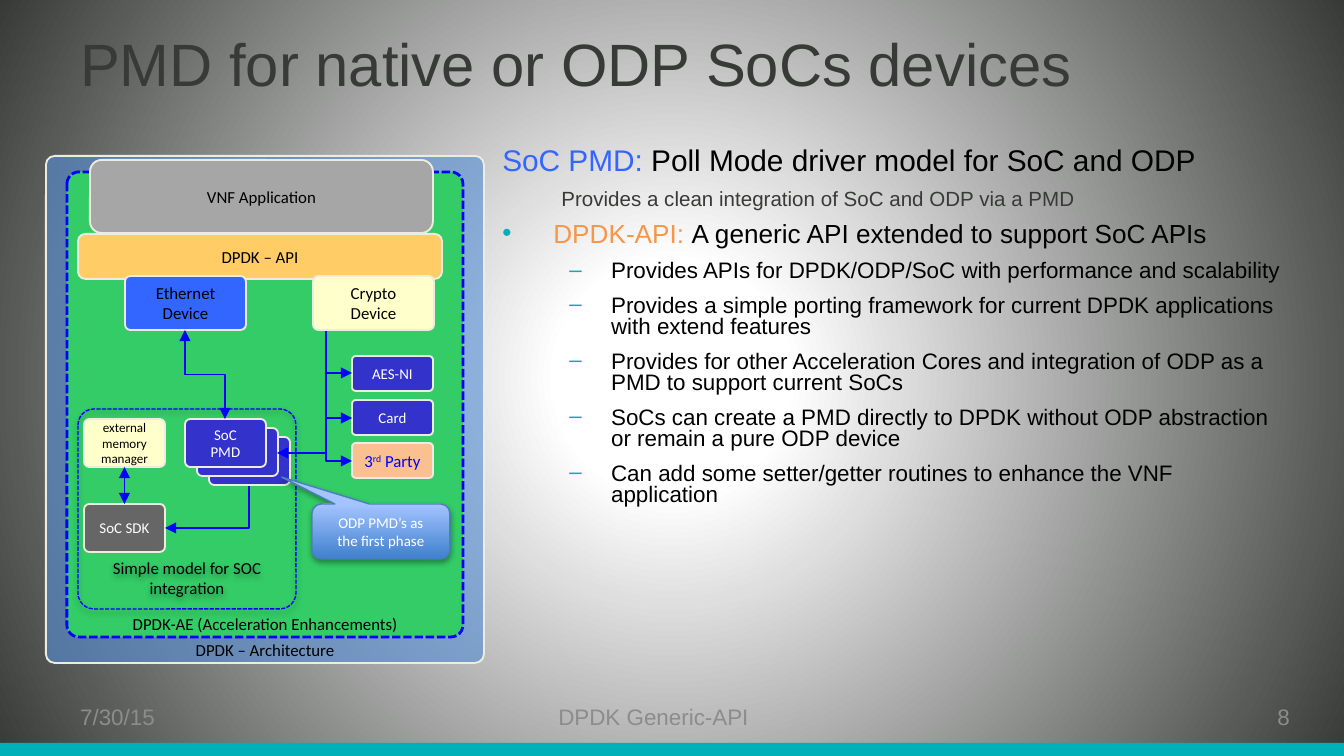
"""Build the slide on poll mode drivers for native or ODP SoC devices."""
from dataclasses import dataclass

import lxml.etree
import pptx
import pptx.dml.color
import pptx.enum.dml
import pptx.enum.shapes
import pptx.enum.text
import pptx.oxml
import pptx.oxml.ns
import pptx.util

PX = 914400 / 134.4
A_NS = "http://schemas.openxmlformats.org/drawingml/2006/main"
SHAPE = pptx.enum.shapes.MSO_SHAPE
ALIGN = pptx.enum.text.PP_ALIGN
ANCHOR = pptx.enum.text.MSO_ANCHOR
SYS_DASH = pptx.enum.dml.MSO_LINE.SQUARE_DOT
BLACK, WHITE, BLUE, CREAM = "000000", "FFFFFF", "0000FF", "FFFFCC"
INDIGO, EDGE, DARK, GREY, TEAL = "3333CC", "EEECE1", "373A36", "8C8C8C", "00B0B9"


@dataclass
class Box:
    x: int
    y: int
    w: int
    h: int
    text: str = ""
    fill: str | None = None
    adj: tuple = (0.11,)
    size: int = 9
    color: str = BLACK
    anchor: ANCHOR = ANCHOR.MIDDLE
    line: str = EDGE
    width: float = 1
    dashed: bool = False
    inset: int = 0
    kind: SHAPE = SHAPE.ROUNDED_RECTANGLE


@dataclass
class Elbow:
    x0: int
    y0: int
    x1: int
    y1: int
    preset: str = "bentConnector2"
    both: bool = False


@dataclass
class Label:
    x: int
    y: int
    w: int
    h: int
    text: str
    size: int
    color: str
    align: ALIGN = ALIGN.LEFT


@dataclass
class Item:
    runs: list
    size: int
    level: int = 0
    margin: float = 0
    indent: float = 0
    bullet: str = ""


def px(n: float) -> int:
    """Turn pixels into EMU."""
    return round(n * PX)


def rgb(value: str) -> pptx.dml.color.RGBColor:
    """Turn a hex string into a colour."""
    return pptx.dml.color.RGBColor.from_string(value)


def add_xml(parent, xml: str) -> None:
    """Append one drawing element given as text."""
    parent.append(pptx.oxml.parse_xml(xml.replace(" ", f' xmlns:a="{A_NS}" ', 1)))


def style(font, size: int, color: str, name: str) -> None:
    """Set size, colour and typeface."""
    font.size, font.name = pptx.util.Pt(size), name
    font.color.rgb = rgb(color)


def set_background(s) -> None:
    """Fill the background with a circular gradient."""
    fill = s.background.fill
    fill.gradient()
    for stop, color, pos in zip(fill.gradient_stops, (WHITE, DARK), (0.15, 1)):
        stop.color.rgb, stop.position = rgb(color), pos
    grad = s._element.find(".//" + pptx.oxml.ns.qn("a:gradFill"))
    grad.remove(grad.find(pptx.oxml.ns.qn("a:lin")))
    add_xml(grad, '<a:path path="circle"><a:fillToRect l="50000" t="50000" '
                  'r="50000" b="50000"/></a:path>')


def add_shadow(sp) -> None:
    """Give a shape a soft shadow below it."""
    effects = sp._element.spPr.find(pptx.oxml.ns.qn("a:effectLst"))
    add_xml(effects, '<a:outerShdw blurRad="39370" dist="22860" dir="5400000" rotWithShape="0">'
                     '<a:srgbClr val="000000"><a:alpha val="35000"/></a:srgbClr></a:outerShdw>')


def add_box(s, b: Box):
    """Draw one block of the diagram with its text."""
    sp = s.shapes.add_shape(b.kind, px(b.x), px(b.y), px(b.w), px(b.h))
    sp.shadow.inherit = False
    for i, value in enumerate(b.adj):
        sp.adjustments[i] = value
    if b.fill:
        sp.fill.solid()
        sp.fill.fore_color.rgb = rgb(b.fill)
    else:
        sp.fill.background()
    sp.line.color.rgb, sp.line.width = rgb(b.line), pptx.util.Pt(b.width)
    if b.dashed:
        sp.line.dash_style = SYS_DASH
    tf = sp.text_frame
    tf.word_wrap, tf.vertical_anchor = True, b.anchor
    tf.margin_left = tf.margin_right = px(b.inset)
    tf.margin_top = tf.margin_bottom = px(b.inset / 2)
    tf.text = b.text
    for p in tf.paragraphs:
        p.alignment = ALIGN.CENTER
        for r in p.runs:
            style(r.font, b.size, b.color, "Calibri")
    return sp


def finish_line(c, both: bool) -> None:
    """Set line colour, width and arrowheads of a connector."""
    c.line.color.rgb, c.line.width = rgb(BLUE), pptx.util.Pt(1)
    ln = c.line._get_or_add_ln()
    for tag in ("headEnd", "tailEnd") if both else ("tailEnd",):
        add_xml(ln, f'<a:{tag} type="triangle"/>')
    lxml.etree.SubElement(c._element.spPr, pptx.oxml.ns.qn("a:effectLst"))


def add_elbow(s, e: Elbow) -> None:
    """Draw an elbow that leaves its start vertically."""
    w, h = e.y1 - e.y0, abs(e.x1 - e.x0)
    left, top = (e.x0 + e.x1 - w) / 2, (e.y0 + e.y1 - h) / 2
    c = s.shapes.add_connector(pptx.enum.shapes.MSO_CONNECTOR.ELBOW,
                               px(left), px(top), px(left + w), px(top + h))
    xfrm = c._element.spPr.find(pptx.oxml.ns.qn("a:xfrm"))
    rightward = e.x1 > e.x0
    xfrm.set("rot", "16200000" if rightward else "5400000")
    if rightward:
        xfrm.set("flipH", "1")
    c._element.spPr.find(pptx.oxml.ns.qn("a:prstGeom")).set("prst", e.preset)
    finish_line(c, e.both)


def add_label(s, t: Label) -> None:
    """Add one line of plain text."""
    tf = s.shapes.add_textbox(px(t.x), px(t.y), px(t.w), px(t.h)).text_frame
    tf.word_wrap, tf.vertical_anchor = True, ANCHOR.MIDDLE
    tf.text = t.text
    p = tf.paragraphs[0]
    p.alignment = t.align
    style(p.runs[0].font, t.size, t.color, "Arial")


def add_items(s, items: list[Item]) -> None:
    """Write the explanatory text beside the diagram."""
    tf = s.shapes.add_textbox(px(489), px(142), px(811), px(507)).text_frame
    tf.word_wrap = True
    for i, item in enumerate(items):
        p = tf.add_paragraph() if i else tf.paragraphs[0]
        p.level, p.line_spacing = item.level, 0.8
        p.space_before, p.space_after = pptx.util.Pt(3 if i else 0), pptx.util.Pt(4)
        ppr = p._p.get_or_add_pPr()
        ppr.set("marL", str(pptx.util.Inches(item.margin)))
        ppr.set("indent", str(pptx.util.Inches(item.indent)))
        if item.bullet:
            add_xml(ppr, f'<a:buClr ><a:srgbClr val="{TEAL}"/></a:buClr>')
            add_xml(ppr, '<a:buFont typeface="Arial"/>')
            add_xml(ppr, f'<a:buChar char="{item.bullet}"/>')
        for text, color in item.runs:
            r = p.add_run()
            r.text = text
            style(r.font, item.size, color, "Arial")


def add_diagram(s) -> None:
    """Draw the architecture diagram from back to front."""
    arch = add_box(s, Box(46, 156, 438, 507, "DPDK – Architecture", "558ED5", (0.02,),
                          anchor=ANCHOR.BOTTOM))
    add_xml(arch._element.spPr.find(".//" + pptx.oxml.ns.qn("a:srgbClr")),
            '<a:alpha val="61000"/>')
    add_box(s, Box(67, 172, 396, 465, "DPDK-AE (Acceleration Enhancements)", "33CC66", (0.03,),
                   anchor=ANCHOR.BOTTOM, line=BLUE, width=1.5, dashed=True))
    add_box(s, Box(78, 234, 364, 45, "DPDK – API", "FFCC66", (0.16,)))
    for y, name in ((356, "AES-NI"), (400, "Card")):
        add_box(s, Box(352, y, 81, 35, name, INDIGO, size=8, color=WHITE))
    sdk = add_box(s, Box(84, 504, 81, 48, "SoC SDK", "666666", size=8, color=WHITE))
    for depth, name in ((2, ""), (1, ""), (0, "SoC\nPMD")):
        add_box(s, Box(185 + 12 * depth, 419 + 9 * depth, 81, 48, name, INDIGO,
                       size=8, color=WHITE))
    memory = add_box(s, Box(84, 419, 81, 48, "external\nmemory\nmanager", CREAM, size=7))
    party = add_box(s, Box(352, 443, 81, 35, "", "FAC090"))
    for text, raised in (("3", False), ("rd", True), (" Party", False)):
        r = party.text_frame.paragraphs[0].add_run()
        r.text = text
        style(r.font, 9, BLUE, "Calibri")
        if raised:
            r.font._element.set("baseline", "30000")
    for y in (373, 418, 461):
        add_elbow(s, Elbow(326, 328, 352, y))
    add_elbow(s, Elbow(326, 297, 277, 453))
    c = s.shapes.add_connector(pptx.enum.shapes.MSO_CONNECTOR.STRAIGHT, 0, 0, 0, 0)
    c.begin_connect(memory, 2)
    c.end_connect(sdk, 0)
    finish_line(c, True)
    add_elbow(s, Elbow(249, 486, 165, 528))
    add_box(s, Box(90, 160, 343, 73, "VNF Application", "A6A6A6", (0.16,)))
    add_box(s, Box(313, 276, 121, 54, "Crypto\nDevice", CREAM, (0.1,)))
    add_shadow(add_box(s, Box(78, 409, 218, 200, "Simple model for SOC integration", None, (0.08,),
                              anchor=ANCHOR.BOTTOM, line=BLUE, width=0.75, dashed=True, inset=13)))
    add_box(s, Box(125, 276, 121, 54, "Ethernet\nDevice", "3366FF", (0.1,)))
    add_elbow(s, Elbow(185, 330, 225, 419, "bentConnector3", True))
    callout = add_box(s, Box(312, 504, 138, 55, "ODP PMD’s as the first phase", None,
                             (-0.72, -0.99, 0.17), 8, WHITE, line="4B7EBC", width=0.75,
                             inset=13, kind=SHAPE.ROUNDED_RECTANGULAR_CALLOUT))
    callout.fill.gradient()
    callout.fill.gradient_angle = 90
    for stop, color in zip(callout.fill.gradient_stops, ("3F80CE", "A4C4FF")):
        stop.color.rgb = rgb(color)
    add_shadow(callout)


LABELS = [
    Label(67, 16, 1210, 94, "PMD for native or ODP SoCs devices", 32, DARK),
    Label(1214, 690, 89, 54, "8", 12, GREY, ALIGN.RIGHT),
    Label(325, 690, 657, 54, "DPDK Generic-API", 12, GREY, ALIGN.CENTER),
    Label(67, 690, 245, 54, "7/30/15", 12, GREY),
]
DETAILS = [
    "Provides APIs for DPDK/ODP/SoC with performance and scalability",
    "Provides a simple porting framework for current DPDK applications with extend features",
    "Provides for other Acceleration Cores and integration of ODP as a PMD to support current SoCs",
    "SoCs can create a PMD directly to DPDK without ODP abstraction or remain a pure ODP device",
    "Can add some setter/getter routines to enhance the VNF application",
]
ITEMS = [
    Item([("SoC PMD:", "3366FF"), (" Poll Mode driver model for SoC and ODP", BLACK)], 16),
    Item([("Provides a clean integration of SoC and ODP via a PMD", DARK)], 11, 1, 0.44),
    Item([("DPDK-API: ", "F79646"), ("A generic API extended to support SoC APIs", BLACK)],
         14, 0, 0.38, -0.38, "•"),
    *(Item([(text, BLACK)], 12, 1, 0.81, -0.31, "–") for text in DETAILS),
]


def main() -> None:
    """Build and save the slide."""
    prs = pptx.Presentation()
    prs.slide_width, prs.slide_height = px(1344), px(756)
    s = prs.slides.add_slide(prs.slide_layouts[6])
    set_background(s)
    bar = add_box(s, Box(0, 743, 1344, 13, "", TEAL, (), kind=SHAPE.RECTANGLE))
    bar.line.fill.background()
    for label in LABELS:
        add_label(s, label)
    add_diagram(s)
    add_items(s, ITEMS)
    prs.save("out.pptx")


if __name__ == "__main__":
    main()
